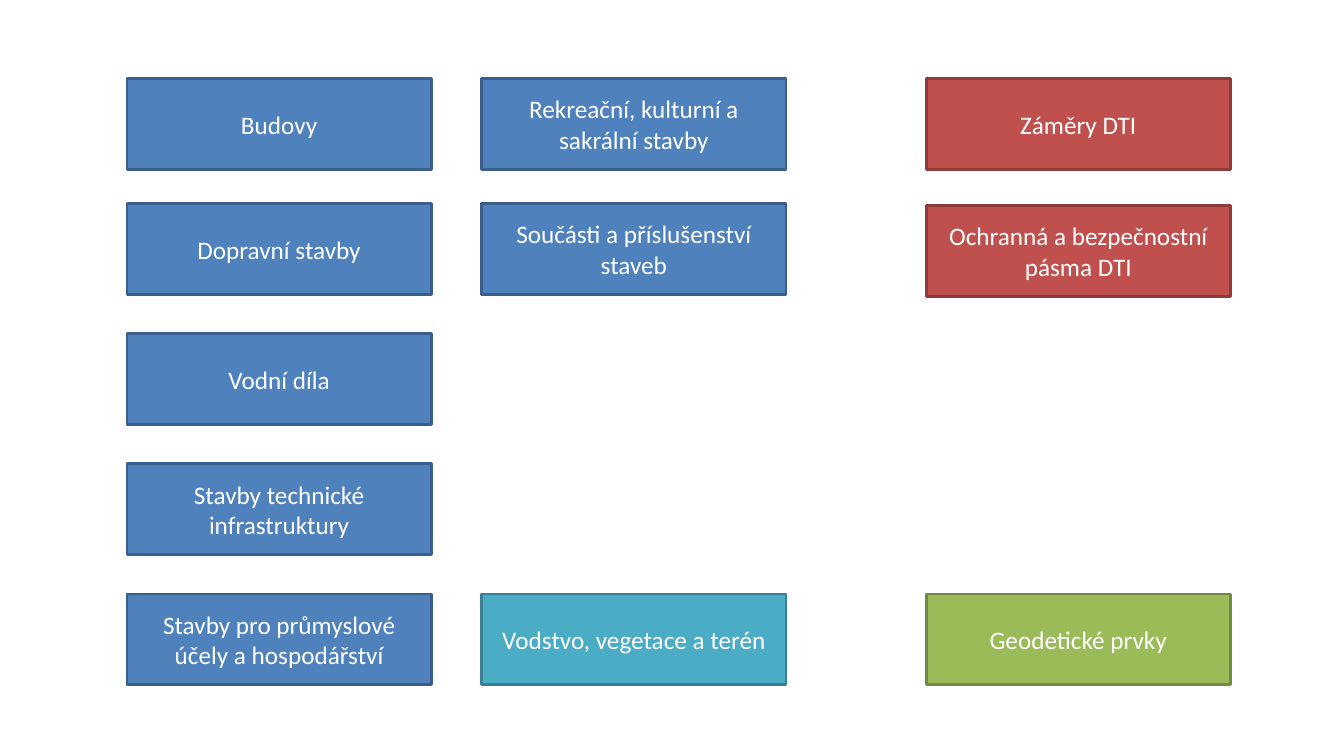
from pptx import Presentation
from pptx.dml.color import RGBColor
from pptx.enum.shapes import MSO_SHAPE as Preset
from pptx.enum.text import MSO_ANCHOR as Anchor, PP_ALIGN as Align
from pptx.util import Cm, Pt

BLUE = ("4F81BD", "3A5F8C")
TEAL = ("4BACC6", "377F92")
GREEN = ("9BBB59", "738A42")
RED = ("C0504D", "8E3B39")

ROW_TOPS = [1.98] + [5.13 + 3.28 * step for step in range(4)]
BUILDINGS_LEFT, SITES_LEFT, PLANS_LEFT = 3.2, 12.14, 23.34

BUILDING_TYPES = [
    "Budovy",
    "Dopravní stavby",
    "Vodní díla",
    "Stavby technické infrastruktury",
    "Stavby pro průmyslové účely a hospodářství",
]
SITE_TYPES = ["Rekreační, kulturní a sakrální stavby", "Součásti a příslušenství staveb"]


def color(hex_string):
    return RGBColor.from_string(hex_string)


def add_category(slide, text, left, top, scheme):
    """Add one category box with centred white text; lengths in centimetres."""
    fill, outline = scheme
    shape = slide.shapes.add_shape(Preset.RECTANGLE, Cm(left), Cm(top), Cm(7.67), Cm(2.29))
    shape.shadow.inherit = False
    shape.fill.solid()
    shape.fill.fore_color.rgb = color(fill)
    shape.line.color.rgb = color(outline)
    shape.line.width = Pt(2)
    frame = shape.text_frame
    frame.word_wrap = True
    frame.vertical_anchor = Anchor.MIDDLE
    paragraph = frame.paragraphs[0]
    paragraph.alignment = Align.CENTER
    run = paragraph.add_run()
    run.text = text
    run.font.name = "Calibri"
    run.font.size = Pt(18)
    run.font.color.rgb = color("FFFFFF")


def add_column(slide, labels, left, scheme):
    for label, top in zip(labels, ROW_TOPS):
        add_category(slide, label, left, top, scheme)


def main():
    presentation = Presentation()
    presentation.slide_width = Cm(33.87)
    presentation.slide_height = Cm(19.05)
    slide = presentation.slides.add_slide(presentation.slide_layouts[6])

    add_column(slide, BUILDING_TYPES, BUILDINGS_LEFT, BLUE)
    add_column(slide, SITE_TYPES, SITES_LEFT, BLUE)
    add_category(slide, "Vodstvo, vegetace a terén", SITES_LEFT, ROW_TOPS[-1], TEAL)
    add_category(slide, "Geodetické prvky", PLANS_LEFT, ROW_TOPS[-1], GREEN)
    add_category(slide, "Záměry DTI", PLANS_LEFT, ROW_TOPS[0], RED)
    add_category(slide, "Ochranná a bezpečnostní pásma DTI", PLANS_LEFT, 5.18, RED)

    presentation.save("out.pptx")


if __name__ == "__main__":
    main()
